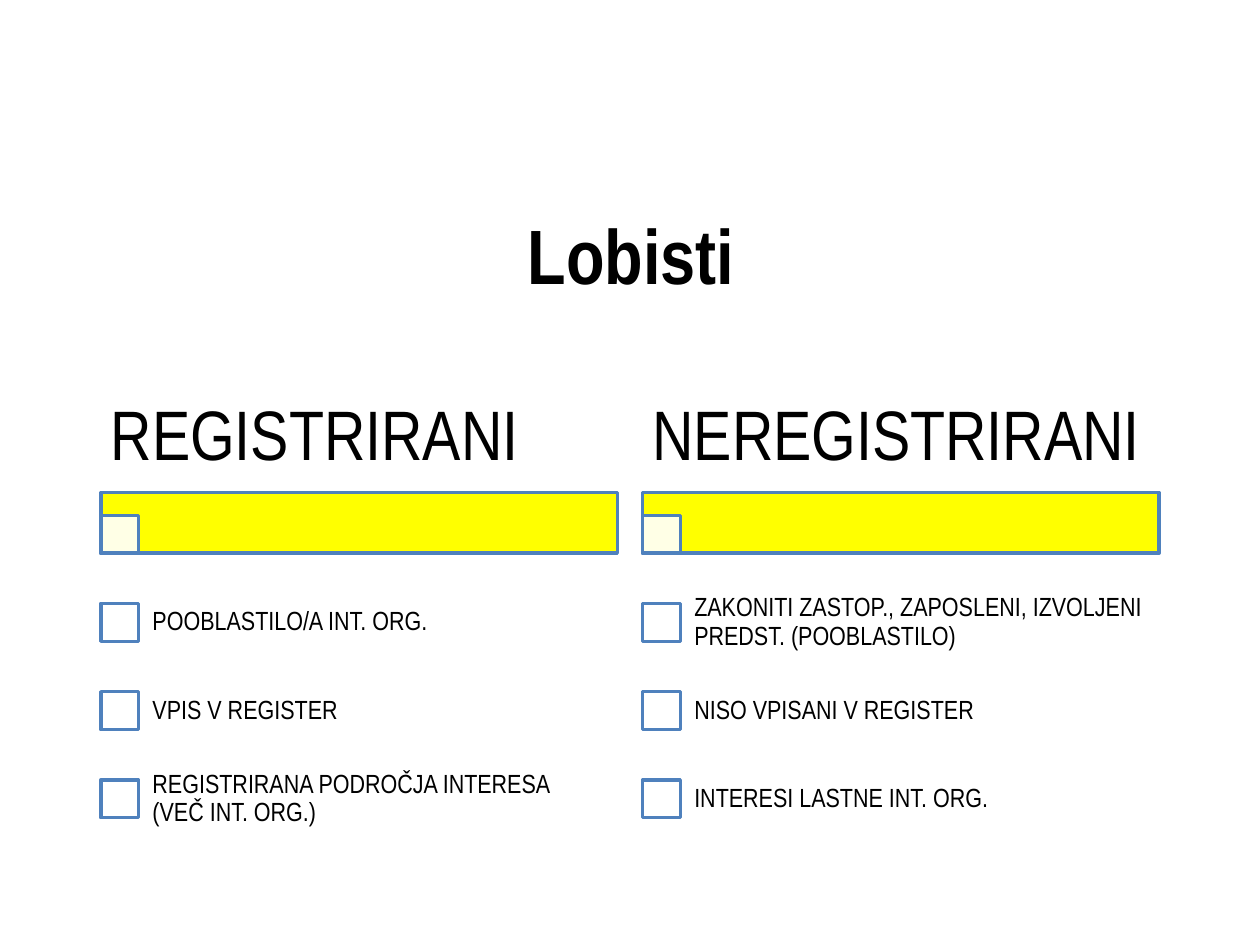
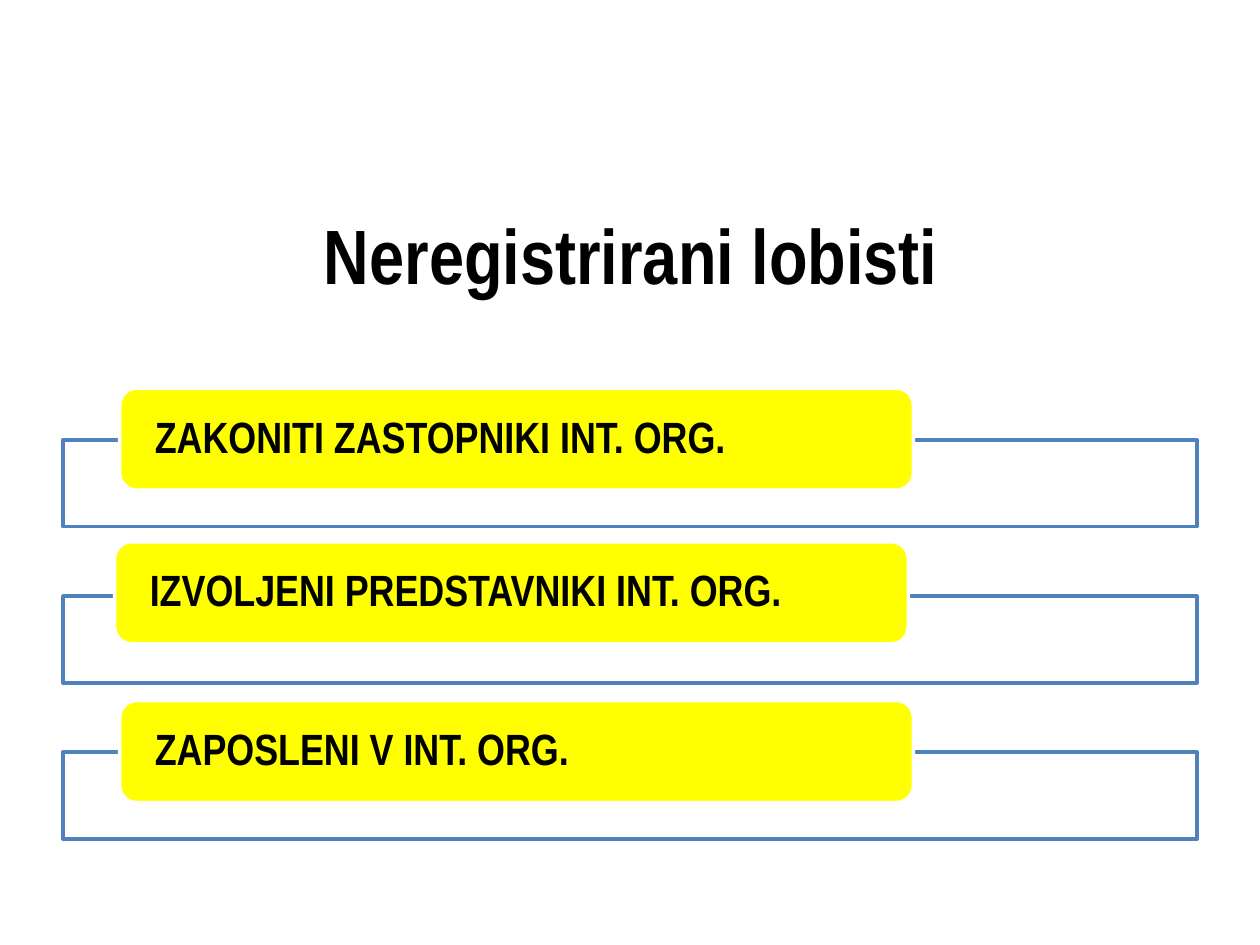
from lxml import etree
from pptx import Presentation
from pptx.dml.color import RGBColor
from pptx.enum.shapes import MSO_SHAPE
from pptx.enum.text import MSO_ANCHOR, MSO_AUTO_SIZE, PP_ALIGN
from pptx.oxml.ns import qn
from pptx.util import Inches, Pt

RECT, ROUND = MSO_SHAPE.RECTANGLE, MSO_SHAPE.ROUNDED_RECTANGLE
MIDDLE = MSO_ANCHOR.MIDDLE
LEFT, CENTER = PP_ALIGN.LEFT, PP_ALIGN.CENTER
NO_FIT = MSO_AUTO_SIZE.NONE

BLACK = RGBColor(0x00, 0x00, 0x00)
WHITE = RGBColor(0xFF, 0xFF, 0xFF)
YELLOW = RGBColor(0xFF, 0xFF, 0x00)
BLUE = RGBColor(0x4F, 0x81, 0xBD)
FONT = "Arial Narrow"
TITLE_ONLY = 5

# Column heading, then its checklist
COLUMNS = [
    ("REGISTRIRANI", [
        "POOBLASTILO/A INT. ORG.",
        "VPIS V REGISTER",
        "REGISTRIRANA PODROČJA INTERESA (VEČ INT. ORG.)",
    ]),
    ("NEREGISTRIRANI", [
        "ZAKONITI ZASTOP., ZAPOSLENI, IZVOLJENI PREDST. (POOBLASTILO)",
        "NISO VPISANI V REGISTER",
        "INTERESI LASTNE INT. ORG.",
    ]),
]

# Label, then its offset from the left and top of the frame
LOBBYISTS = [
    ("ZAKONITI ZASTOPNIKI INT. ORG.", 0.45, -0.41),
    ("IZVOLJENI PREDSTAVNIKI INT. ORG.", 0.41, -0.43),
    ("ZAPOSLENI V INT. ORG.", 0.45, -0.41),
]


def write(sp, text, size, bold=False, align=LEFT, spacing=0.9, inset=(0.1, 0.05)):
    tf = sp.text_frame
    tf.word_wrap = True
    tf.auto_size = NO_FIT
    tf.vertical_anchor = MIDDLE
    tf.margin_left = tf.margin_right = Inches(inset[0])
    tf.margin_top = tf.margin_bottom = Inches(inset[1])
    p = tf.paragraphs[0]
    p.alignment = align
    p.line_spacing = spacing
    r = p.add_run()
    r.text = text
    r.font.name = FONT
    r.font.size = Pt(size)
    r.font.bold = bold
    r.font.color.rgb = BLACK


def add_box(slide, kind, x, y, w, h, fill, line=BLUE, alpha=None):
    sp = slide.shapes.add_shape(kind, Inches(x), Inches(y), Inches(w), Inches(h))
    sp.shadow.inherit = False
    sp.fill.solid()
    sp.fill.fore_color.rgb = fill
    if alpha is not None:
        color = sp._element.spPr.find(qn("a:solidFill"))[0]
        etree.SubElement(color, qn("a:alpha")).set("val", str(alpha * 1000))
    sp.line.color.rgb = line
    sp.line.width = Pt(2)
    return sp


def add_label(slide, x, y, w, h, text, size, inset):
    sp = slide.shapes.add_textbox(Inches(x), Inches(y), Inches(w), Inches(h))
    write(sp, text, size, inset=inset)


def add_titled_slide(prs, title):
    slide = prs.slides.add_slide(prs.slide_layouts[TITLE_ONLY])
    sp = slide.shapes.title
    sp.left, sp.top = Inches(0.51), Inches(1.39)
    sp.width, sp.height = Inches(9), Inches(1.25)
    write(sp, title, 44, bold=True, align=CENTER, spacing=1.0)
    return slide


def add_column(slide, x, y, w, heading, items):
    """Heading above a yellow bar, with a checklist below."""
    box, row_h = 0.3, 0.7
    bar_y = y + 0.87
    add_box(slide, RECT, x, bar_y, w, 0.48, YELLOW)
    add_box(slide, RECT, x, bar_y + 0.18, box, box, WHITE, alpha=90)
    add_label(slide, x, y, w, 0.87, heading, 40, (0.08, 0.06))
    for i, item in enumerate(items):
        row_y = y + 1.55 + i * row_h
        add_box(slide, RECT, x, row_y + (row_h - box) / 2, box, box, WHITE)
        add_label(slide, x + 0.29, row_y, w - 0.29, row_h, item, 15, (0.12, 0.12))


def add_frame(slide, x, y, w, text, dx, dy):
    """Outlined frame with a yellow label across its top edge."""
    add_box(slide, RECT, x, y, w, 0.69, WHITE, alpha=90)
    sp = add_box(slide, ROUND, x + dx, y + dy, 0.7 * w, 0.81, YELLOW, line=WHITE)
    write(sp, text, 25, bold=True, inset=(0.24, 0))


def main():
    prs = Presentation()
    prs.slide_width, prs.slide_height = Inches(10), Inches(7.5)

    # Two kinds of lobbyists
    slide = add_titled_slide(prs, "Lobisti")
    for i, (heading, items) in enumerate(COLUMNS):
        add_column(slide, 0.8 + i * 4.3, 3.04, 4.1, heading, items)

    # Unregistered lobbyists
    slide = add_titled_slide(prs, "Neregistrirani lobisti")
    for i, (text, dx, dy) in enumerate(LOBBYISTS):
        add_frame(slide, 0.5, 3.49 + i * 1.24, 9, text, dx, dy)

    prs.save("out.pptx")


if __name__ == "__main__":
    main()
